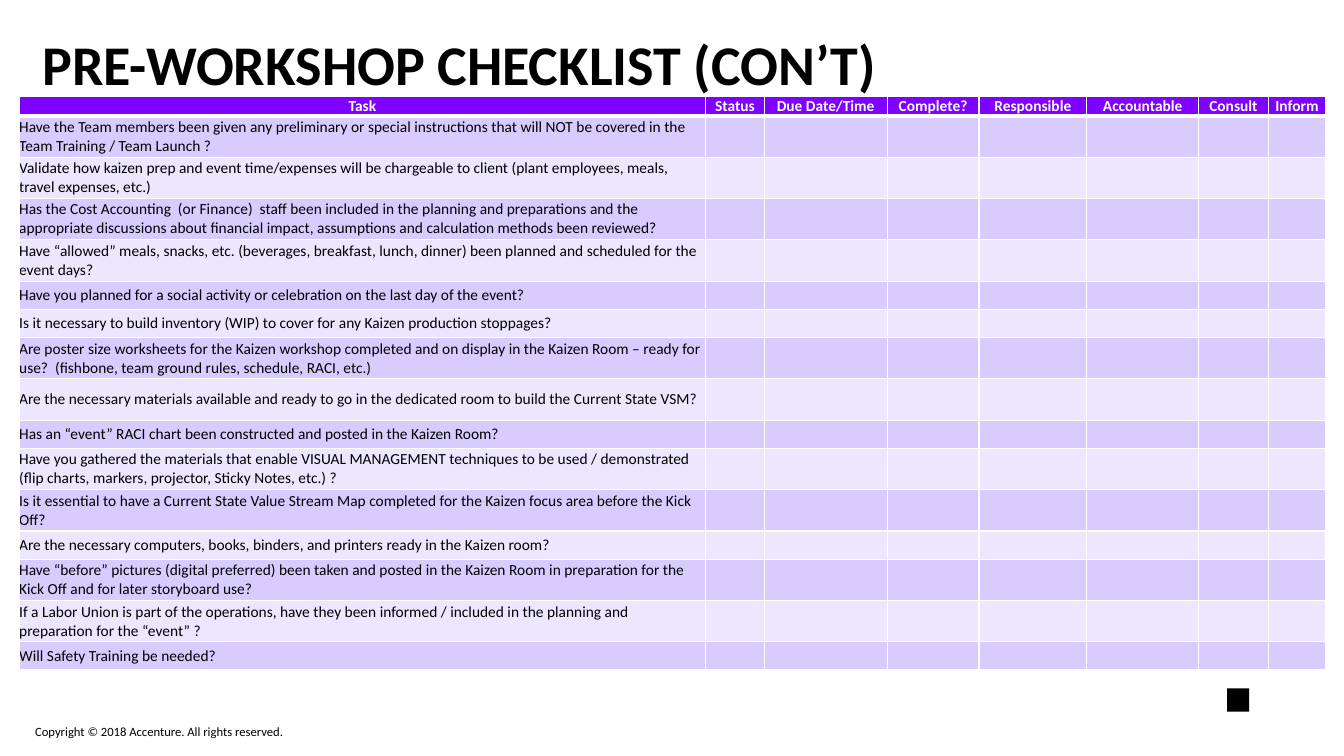
import pptx
import pptx.util
import pptx.dml.color
import pptx.enum.shapes
import pptx.enum.text
import pptx.oxml.ns
from dataclasses import dataclass
from lxml import etree

Inches, Pt = pptx.util.Inches, pptx.util.Pt
RGB = pptx.dml.color.RGBColor.from_string
ALIGN = pptx.enum.text.PP_ALIGN
ANCHOR = pptx.enum.text.MSO_ANCHOR
qn = pptx.oxml.ns.qn


@dataclass(frozen=True)
class Theme:
    font: str = "Calibri"
    text: str = "000000"
    light: str = "FFFFFF"
    header: str = "7E00FF"
    bands: tuple = ("D8CCFF", "ECE7FF")
    title_size: int = 40
    table_size: int = 11
    footer_size: int = 9
    rule: int = 1
    header_rule: int = 3


THEME = Theme()

COLUMNS = [
    ("Task", 6.81), ("Status", 0.58), ("Due Date/Time", 1.22), ("Complete?", 0.91),
    ("Responsible", 1.07), ("Accountable", 1.11), ("Consult", 0.69), ("Inform", 0.57),
]
HEADER_HEIGHT, TALL, SHORT = 0.19, 0.41, 0.28
TASKS = [
    ("Have the Team members been given any preliminary or special instructions that will NOT be "
     "covered in the Team Training / Team Launch ?", TALL),
    ("Validate how kaizen prep and event time/expenses will be chargeable to client "
     "(plant employees, meals, travel expenses, etc.)", TALL),
    ("Has the Cost Accounting  (or Finance)  staff been included in the planning and preparations "
     "and the appropriate discussions about financial impact, assumptions and calculation methods "
     "been reviewed?", TALL),
    ("Have “allowed” meals, snacks, etc. (beverages, breakfast, lunch, dinner) been planned and "
     "scheduled for the event days?", TALL),
    ("Have you planned for a social activity or celebration on the last day of the event?", SHORT),
    ("Is it necessary to build inventory (WIP) to cover for any Kaizen production stoppages?", SHORT),
    ("Are poster size worksheets for the Kaizen workshop completed and on display in the Kaizen "
     "Room – ready for use?  (fishbone, team ground rules, schedule, RACI, etc.)", TALL),
    ("Are the necessary materials available and ready to go in the dedicated room to build the "
     "Current State VSM?", TALL),
    ("Has an “event” RACI chart been constructed and posted in the Kaizen Room?", SHORT),
    ("Have you gathered the materials that enable VISUAL MANAGEMENT techniques to be used / "
     "demonstrated (flip charts, markers, projector, Sticky Notes, etc.) ?", TALL),
    ("Is it essential to have a Current State Value Stream Map completed for the Kaizen focus area "
     "before the Kick Off?", TALL),
    ("Are the necessary computers, books, binders, and printers ready in the Kaizen room?", SHORT),
    ("Have “before” pictures (digital preferred) been taken and posted in the Kaizen Room in "
     "preparation for the Kick Off and for later storyboard use?", TALL),
    ("If a Labor Union is part of the operations, have they been informed / included in the "
     "planning and preparation for the “event” ?", TALL),
    ("Will Safety Training be needed?", SHORT),
]


def add_run(p, text, size, color=THEME.text, bold=False):
    r = p.add_run()
    r.text = text
    r.font.name = THEME.font
    r.font.size = Pt(size)
    r.font.bold = bold
    r.font.color.rgb = RGB(color)


def set_margins(box, left=0, top=0, right=0, bottom=0):
    box.margin_left, box.margin_top = Inches(left), Inches(top)
    box.margin_right, box.margin_bottom = Inches(right), Inches(bottom)


def add_title(s, text):
    sp = s.shapes.title
    sp.left, sp.top, sp.width, sp.height = Inches(0.42), Inches(0.42), Inches(12.5), Inches(1.42)
    tf = sp.text_frame
    tf.word_wrap = True
    tf.auto_size = pptx.enum.text.MSO_AUTO_SIZE.NONE
    tf.vertical_anchor = ANCHOR.TOP
    set_margins(tf, top=0.05)
    p = tf.paragraphs[0]
    p.alignment = ALIGN.LEFT
    p.line_spacing = 0.7
    add_run(p, text, THEME.title_size, bold=True)


def set_borders(cell, top, bottom):
    """Draw light rules round a cell; widths in points."""
    tcPr = cell._tc.get_or_add_tcPr()
    sides = {"L": THEME.rule, "R": THEME.rule, "T": top, "B": bottom}
    for side, width in sides.items():
        ln = etree.SubElement(tcPr, qn(f"a:ln{side}"), w=str(Pt(width)))
        fill = etree.SubElement(ln, qn("a:solidFill"))
        etree.SubElement(fill, qn("a:srgbClr"), val=THEME.light)


def format_cell(cell, fill, top=THEME.rule, bottom=THEME.rule):
    set_margins(cell)
    cell.vertical_anchor = ANCHOR.MIDDLE
    set_borders(cell, top, bottom)
    cell.fill.solid()
    cell.fill.fore_color.rgb = RGB(fill)


def add_header_cell(cell, label):
    format_cell(cell, THEME.header, bottom=THEME.header_rule)
    p = cell.text_frame.paragraphs[0]
    p.alignment = ALIGN.CENTER
    add_run(p, label, THEME.table_size, THEME.light, bold=True)


def add_task_row(table, row, task):
    top = THEME.header_rule if row == 1 else THEME.rule
    for col in range(len(COLUMNS)):
        cell = table.cell(row, col)
        format_cell(cell, THEME.bands[(row - 1) % 2], top=top)
        p = cell.text_frame.paragraphs[0]
        if col == 0:
            add_run(p, task, THEME.table_size)
        else:
            # Small type keeps blank cells from stretching the row
            etree.SubElement(p._p, qn("a:endParaRPr"), sz=str(THEME.table_size * 100))


def add_checklist(s):
    heights = [HEADER_HEIGHT] + [height for _, height in TASKS]
    widths = [width for _, width in COLUMNS]
    table = s.shapes.add_table(len(heights), len(widths), Inches(0.19), Inches(0.96),
                               Inches(sum(widths)), Inches(sum(heights))).table
    for row, height in zip(table.rows, heights):
        row.height = Inches(height)
    for col, (label, width) in enumerate(COLUMNS):
        table.columns[col].width = Inches(width)
        add_header_cell(table.cell(0, col), label)
    for row, (task, _) in enumerate(TASKS, start=1):
        add_task_row(table, row, task)


def add_corner_mark(s):
    sp = s.shapes.add_shape(pptx.enum.shapes.MSO_SHAPE.RECTANGLE,
                            Inches(12.17), Inches(6.83), Inches(0.22), Inches(0.23))
    sp.shadow.inherit = False
    sp.fill.solid()
    sp.fill.fore_color.rgb = RGB(THEME.text)
    sp.line.fill.background()


def add_footer(s, text):
    sp = s.shapes.add_textbox(Inches(0.25), Inches(7.13), Inches(4.5), Inches(0.15))
    tf = sp.text_frame
    tf.word_wrap = True
    add_run(tf.paragraphs[0], text, THEME.footer_size)


def main():
    prs = pptx.Presentation()
    prs.slide_width, prs.slide_height = Inches(13.33), Inches(7.5)
    s = prs.slides.add_slide(prs.slide_layouts[5])
    add_title(s, "PRE-WORKSHOP CHECKLIST (CON’T)")
    add_checklist(s)
    add_corner_mark(s)
    add_footer(s, "Copyright © 2018 Accenture. All rights reserved.")
    prs.save("out.pptx")


if __name__ == "__main__":
    main()
